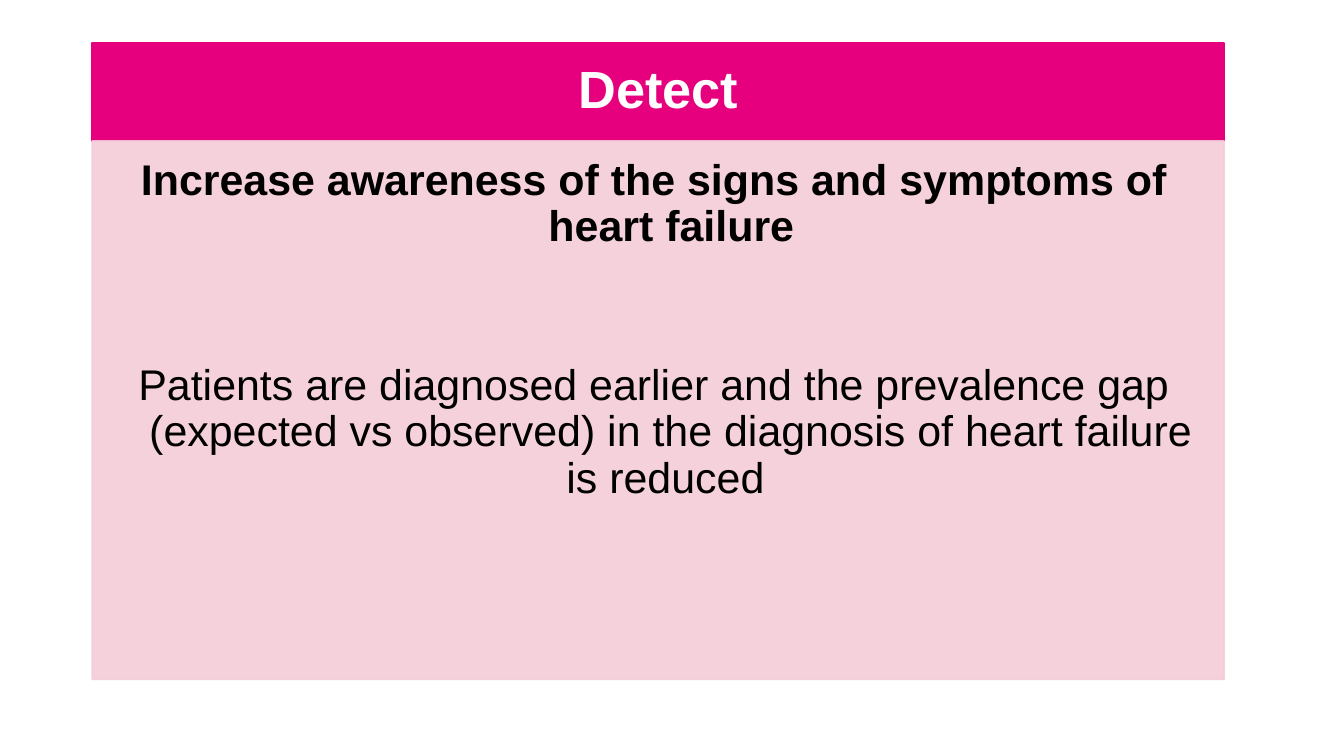
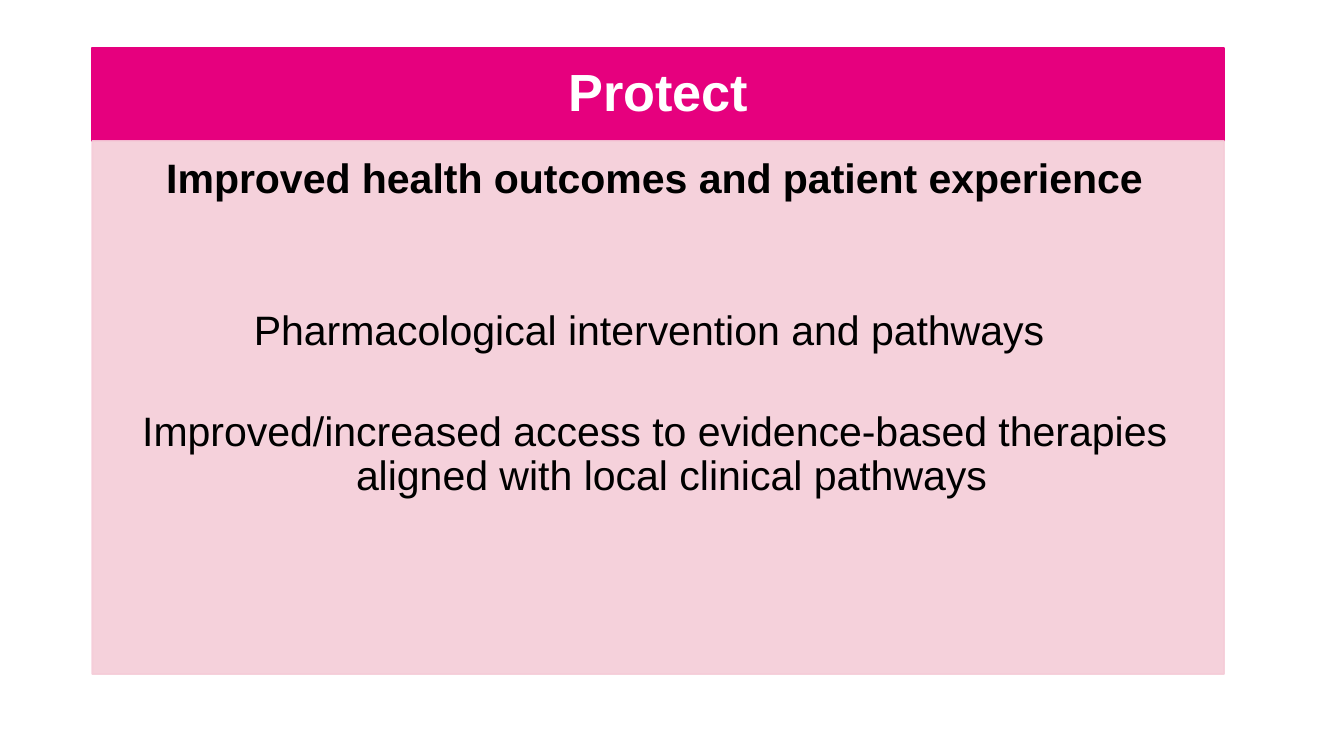
from dataclasses import dataclass

from lxml.etree import SubElement
from pptx import Presentation
from pptx.dml.color import RGBColor
from pptx.dml.fill import FillFormat
from pptx.enum.text import MSO_ANCHOR as Anchor, MSO_AUTO_SIZE as AutoSize, PP_ALIGN as Align
from pptx.oxml.ns import qn
from pptx.util import Inches, Pt

WIDTH = Inches(10)
HEIGHT = WIDTH * 9 // 16
FONT = "Arial"
PINK, BLUSH, WHITE, BLACK = "E6007E", "F5CCD8", "FFFFFF", "000000"
LEFT, SPAN, SEAM = 6.87, 84.2, 18.65
LINE, AFTER, PITCH = 0.9, 0.15, 1.23


@dataclass(frozen=True)
class Line:
    text: str
    bold: bool = False
    gap: int = 0


@dataclass(frozen=True)
class Panel:
    heading: str
    top: float
    bottom: float
    size: int
    lines: tuple[Line, ...]


PANELS = (
    Panel("Detect", 5.65, 89.85, 23, (
        Line("Increase awareness of the signs and symptoms of heart failure", bold=True),
        Line("Patients are diagnosed earlier and the prevalence gap (expected vs observed) "
             "in the diagnosis of heart failure is reduced ", gap=2),
    )),
    Panel("Protect", 6.35, 89.15, 22, (
        Line("Improved health outcomes and patient experience", bold=True),
        Line("Pharmacological intervention and pathways ", gap=2),
        Line("Improved/increased access to evidence-based therapies "
             "aligned with local clinical pathways", gap=1),
    )),
)


def paint(fill: FillFormat, color: str, opacity: int = 100) -> None:
    fill.solid()
    fill.fore_color.rgb = RGBColor.from_string(color)
    if opacity < 100:
        clr = fill._xPr.find(qn("a:solidFill"))[0]
        SubElement(clr, qn("a:alpha"), val=str(opacity * 1000))


def place(sp, top: float, bottom: float, color: str, insets: tuple, anchor, opacity: int = 100):
    """Move a placeholder to its rows, in percent of the slide, and fill it."""
    sp.left, sp.width = int(WIDTH * LEFT / 100), int(WIDTH * SPAN / 100)
    sp.top, sp.height = int(HEIGHT * top / 100), int(HEIGHT * (bottom - top) / 100)
    paint(sp.fill, color, opacity)
    paint(sp.line.fill, color, opacity)
    sp.line.width = Pt(1)
    tf = sp.text_frame
    tf.word_wrap, tf.auto_size, tf.vertical_anchor = True, AutoSize.NONE, anchor
    tf.margin_left, tf.margin_top, tf.margin_right, tf.margin_bottom = map(Inches, insets)
    return tf


def write(p, text: str, size: int, color: str, bold: bool, after: float, before: float = 0) -> None:
    p.text = text
    p.alignment = Align.CENTER
    p.line_spacing = LINE
    p.space_before, p.space_after = Pt(before), Pt(after * size)
    for r in p.runs:
        r.font.name, r.font.size, r.font.bold = FONT, Pt(size), bold
        r.font.color.rgb = RGBColor.from_string(color)


def hang(p) -> None:
    p.level = 1
    pPr = p._p.get_or_add_pPr()
    pPr.set("marL", str(Inches(0.25)))
    pPr.set("indent", str(-Inches(0.25)))
    SubElement(pPr, qn("a:buNone"))


def add_panel(prs, panel: Panel) -> None:
    s = prs.slides.add_slide(prs.slide_layouts[1])
    tf = place(s.shapes.title, panel.top, SEAM, PINK, (0.22, 0.12, 0.22, 0.12), Anchor.MIDDLE)
    write(tf.paragraphs[0], panel.heading, 28, WHITE, True, 0.35)
    tf = place(s.placeholders[1], SEAM, panel.bottom, BLUSH,
               (0.13, 0.13, 0.18, 0.2), Anchor.TOP, opacity=90)
    for i, line in enumerate(panel.lines):
        p = tf.add_paragraph() if i else tf.paragraphs[0]
        hang(p)
        write(p, line.text, panel.size, BLACK, line.bold, AFTER, line.gap * PITCH * panel.size)


def main() -> None:
    prs = Presentation()
    prs.slide_width, prs.slide_height = WIDTH, HEIGHT
    for panel in PANELS:
        add_panel(prs, panel)
    prs.save("out.pptx")


if __name__ == "__main__":
    main()
